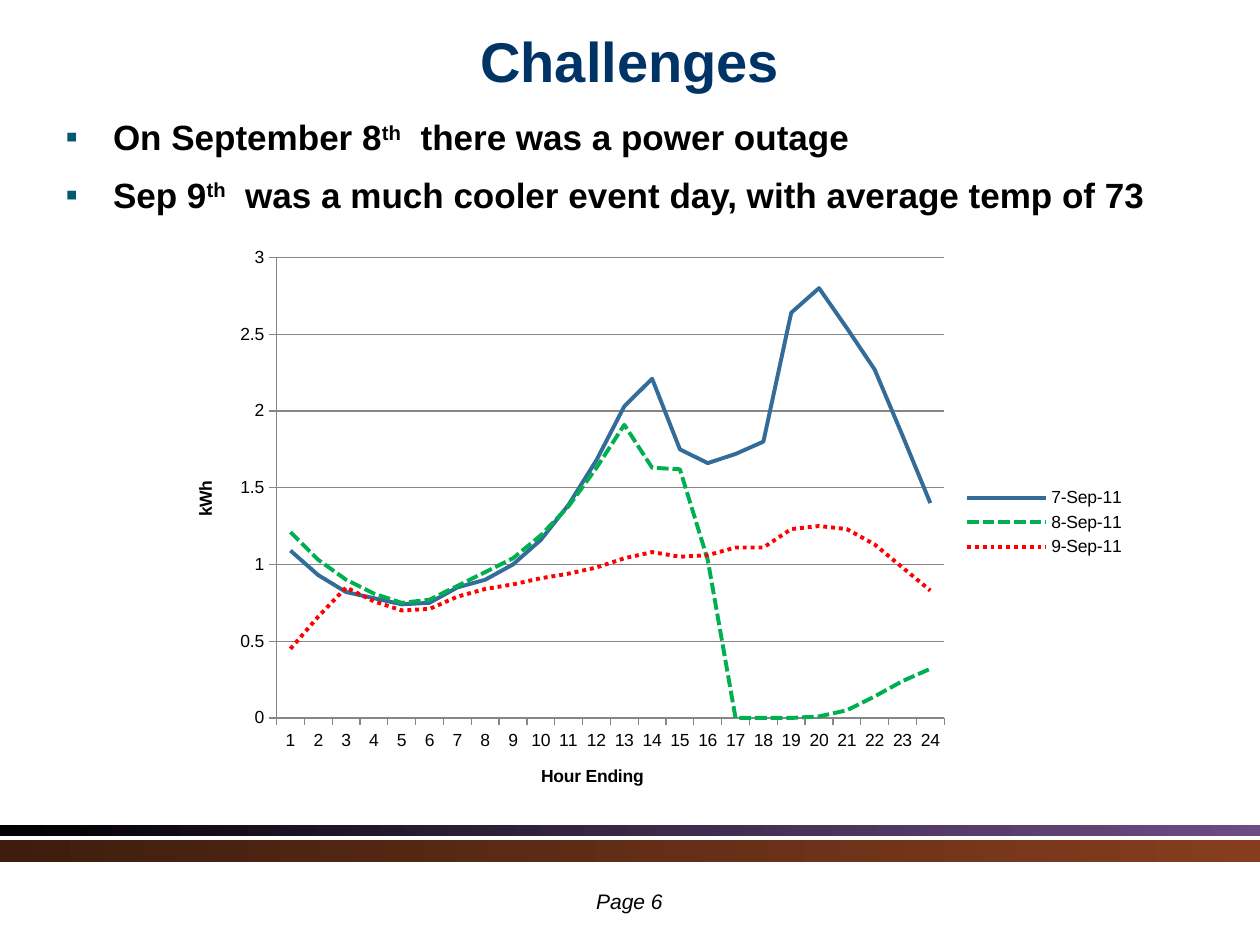
"""Build the Challenges slide: two remarks above a line chart of hourly kWh."""
from lxml.etree import SubElement
from pptx import Presentation
from pptx.chart.data import CategoryChartData
from pptx.dml.color import RGBColor
from pptx.enum.chart import XL_CHART_TYPE as ChartType, XL_LEGEND_POSITION as LegendSide
from pptx.enum.chart import XL_TICK_MARK as Tick
from pptx.enum.dml import MSO_LINE as Dash
from pptx.enum.shapes import MSO_SHAPE as Preset
from pptx.enum.text import MSO_ANCHOR as Anchor, PP_ALIGN as Align
from pptx.oxml.ns import qn
from pptx.util import Pt

COLORS = {
    "title": "003366", "text": "000000", "bullet": "00596F", "axis": "868686",
    "black": "000000", "purple": "542D6F", "dark brown": "3E1D0E", "brown": "853D1E",
    "sep 7": "336C99", "sep 8": "00B050", "sep 9": "FF0000",
}


def rgb(name):
    return RGBColor.from_string(COLORS[name])


def add_text(paragraph, text, size=20, color="text", bold=False, italic=False, raised=False):
    run = paragraph.add_run()
    run.text = text
    font = run.font
    font.name, font.size, font.bold, font.italic = "Arial", Pt(size), bold, italic
    font.color.rgb = rgb(color)
    if raised:
        run._r.get_or_add_rPr().set("baseline", "30000")


deck = Presentation()
deck.slide_width, deck.slide_height = Pt(720), Pt(540)
slide = deck.slides.add_slide(deck.slide_layouts[6])
shapes = slide.shapes

for top, height, start, end, opacity in [
    (471.5, 6, "black", "purple", 85),
    (480, 12.5, "dark brown", "brown", 100),
]:
    stripe = shapes.add_shape(Preset.RECTANGLE, 0, Pt(top), Pt(720), Pt(height))
    stripe.shadow.inherit = False
    stripe.line.fill.background()
    stripe.fill.gradient()
    stripe.fill.gradient_angle = 0
    for stop, color in zip(stripe.fill.gradient_stops, (start, end)):
        stop.color.rgb = rgb(color)
    if opacity < 100:
        end_color = list(stripe._element.iter(qn("a:srgbClr")))[-1]
        SubElement(end_color, qn("a:alpha"), val=str(opacity * 1000))

title = shapes.add_textbox(Pt(36), 0, Pt(648), Pt(68.4)).text_frame
title.word_wrap = True
title.vertical_anchor = Anchor.MIDDLE
title.paragraphs[0].alignment = Align.CENTER
add_text(title.paragraphs[0], "Challenges", size=32, color="title", bold=True)

remarks = shapes.add_textbox(Pt(30.5), Pt(62.6), Pt(648), Pt(64)).text_frame
remarks.word_wrap = True
for index, (day, remark) in enumerate([
    ("On September 8", "  there was a power outage"),
    ("Sep 9", "  was a much cooler event day, with average temp of 73"),
]):
    paragraph = remarks.add_paragraph() if index else remarks.paragraphs[0]
    if index:
        paragraph.space_before = Pt(9)
    properties = paragraph._p.get_or_add_pPr()
    properties.set("marL", str(Pt(27)))
    properties.set("indent", str(-Pt(27)))
    bullet_color = SubElement(properties, qn("a:buClr"))
    SubElement(bullet_color, qn("a:srgbClr"), val=COLORS["bullet"])
    SubElement(properties, qn("a:buFont"), typeface="Arial")
    SubElement(properties, qn("a:buChar"), char="▪")
    add_text(paragraph, day, bold=True)
    add_text(paragraph, "th", bold=True, raised=True)
    add_text(paragraph, remark, bold=True)

page = shapes.add_textbox(Pt(283), Pt(504), Pt(153.4), Pt(16)).text_frame
page.word_wrap = True
page.paragraphs[0].alignment = Align.CENTER
add_text(page.paragraphs[0], "Page 6", size=12, italic=True)

days = [
    ("7-Sep-11", "sep 7", Dash.SOLID,
     [1.09, 0.93, 0.82, 0.78, 0.74, 0.75, 0.85, 0.9, 1, 1.16, 1.39, 1.68,
      2.03, 2.21, 1.75, 1.66, 1.72, 1.8, 2.64, 2.8, 2.54, 2.27, 1.84, 1.4]),
    ("8-Sep-11", "sep 8", Dash.SQUARE_DOT,
     [1.21, 1.03, 0.9, 0.81, 0.75, 0.77, 0.86, 0.95, 1.04, 1.19, 1.38, 1.63,
      1.91, 1.63, 1.62, 1.03, 0, 0, 0, 0.01, 0.05, 0.14, 0.24, 0.32]),
    ("9-Sep-11", "sep 9", Dash.ROUND_DOT,
     [0.45, 0.66, 0.85, 0.76, 0.7, 0.71, 0.79, 0.84, 0.87, 0.91, 0.94, 0.98,
      1.04, 1.08, 1.05, 1.06, 1.11, 1.11, 1.23, 1.25, 1.23, 1.13, 0.98, 0.83]),
]
usage = CategoryChartData()
usage.categories = [str(hour) for hour in range(1, 25)]
for day, _, _, values in days:
    usage.add_series(day, values)
chart = shapes.add_chart(ChartType.LINE, Pt(97.2), Pt(134), Pt(553), Pt(329), usage).chart
chart.has_title = False
chart.font.name, chart.font.size = "Arial", Pt(10)
chart.font.color.rgb = rgb("text")
chart.has_legend = True
chart.legend.position = LegendSide.RIGHT
chart.legend.include_in_layout = False

plot = chart.plots[0]
plot.vary_by_categories = False
for series, (_, color, dash, _) in zip(plot.series, days):
    series.smooth = False
    series.format.line.width = Pt(2.25)
    series.format.line.color.rgb = rgb(color)
    series.format.line.dash_style = dash

hours, energy = chart.category_axis, chart.value_axis
for axis, label in [(hours, "Hour Ending"), (energy, "kWh")]:
    add_text(axis.axis_title.text_frame.paragraphs[0], label, size=10, bold=True)
    axis.major_tick_mark, axis.minor_tick_mark = Tick.OUTSIDE, Tick.NONE
    axis.format.line.color.rgb = rgb("axis")
    axis.format.line.width = Pt(0.75)
energy.minimum_scale, energy.maximum_scale, energy.major_unit = 0, 3, 0.5
energy.tick_labels.number_format = "General"
energy.tick_labels.number_format_is_linked = False
energy.has_major_gridlines = True
energy.major_gridlines.format.line.color.rgb = rgb("axis")
energy.major_gridlines.format.line.width = Pt(0.75)

plot_area = chart._chartSpace.chart.plotArea
for automatic in plot_area.findall(qn("c:layout")):
    plot_area.remove(automatic)
layout = SubElement(plot_area, qn("c:layout"))
plot_area.insert(0, layout)
manual = SubElement(layout, qn("c:manualLayout"))
for tag, value in [("layoutTarget", "inner"), ("xMode", "edge"), ("yMode", "edge"),
                   ("x", "0.11"), ("y", "0.04"), ("w", "0.69"), ("h", "0.8")]:
    SubElement(manual, qn(f"c:{tag}"), val=value)

deck.save("out.pptx")
